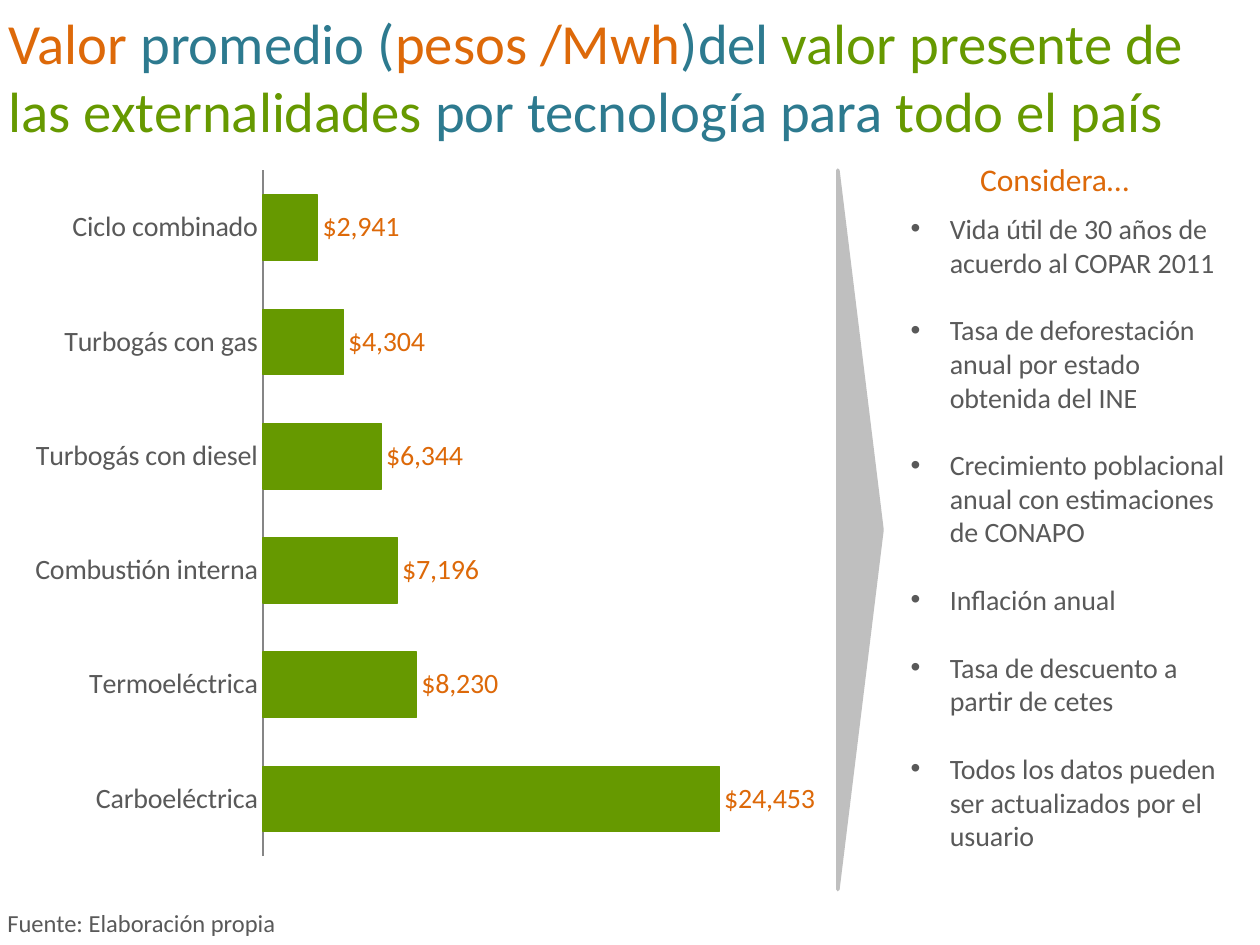
"""Build the slide on average externality values per generation technology."""
from dataclasses import dataclass

from lxml import etree
from pptx import Presentation
from pptx.chart.data import CategoryChartData
from pptx.dml.color import RGBColor
from pptx.enum.chart import XL_CHART_TYPE, XL_LABEL_POSITION, XL_TICK_LABEL_POSITION, XL_TICK_MARK
from pptx.enum.shapes import MSO_SHAPE
from pptx.enum.text import MSO_ANCHOR
from pptx.oxml.ns import qn
from pptx.util import Inches, Pt

BAR_CLUSTERED = XL_CHART_TYPE.BAR_CLUSTERED
OUTSIDE_END = XL_LABEL_POSITION.OUTSIDE_END
NO_LABELS = XL_TICK_LABEL_POSITION.NONE
NO_TICKS = XL_TICK_MARK.NONE
TRIANGLE = MSO_SHAPE.ISOSCELES_TRIANGLE
TOP, MIDDLE = MSO_ANCHOR.TOP, MSO_ANCHOR.MIDDLE


@dataclass(frozen=True)
class Theme:
    font: str = "Calibri"
    orange: RGBColor = RGBColor.from_string("DD6909")
    teal: RGBColor = RGBColor.from_string("2D7A8F")
    green: RGBColor = RGBColor.from_string("669900")
    text: RGBColor = RGBColor.from_string("595959")
    gray: RGBColor = RGBColor.from_string("BFBFBF")
    axis: RGBColor = RGBColor.from_string("868686")
    title_size: Pt = Pt(32.4)
    heading_size: Pt = Pt(18)
    body_size: Pt = Pt(16)
    source_size: Pt = Pt(14)


theme = Theme()
presentation = Presentation()
presentation.slide_width, presentation.slide_height = Inches(10), Inches(7.5)
slide = presentation.slides.add_slide(presentation.slide_layouts[6])


def area(left, top, width, height):
    """Turn percentages of the slide's size into lengths."""
    across, down = presentation.slide_width / 100, presentation.slide_height / 100
    return [round(length) for length in (left * across, top * down, width * across, height * down)]


def add_text(place, paragraphs, size, anchor=TOP):
    """Add a text box whose paragraphs are lists of (text, colour) runs."""
    frame = slide.shapes.add_textbox(*place).text_frame
    frame.word_wrap = True
    frame.vertical_anchor = anchor
    for index, runs in enumerate(paragraphs):
        paragraph = frame.add_paragraph() if index else frame.paragraphs[0]
        for text, color in runs:
            run = paragraph.add_run()
            run.text = text
            run.font.name, run.font.size = theme.font, size
            run.font.color.rgb = color
    return frame


title_runs = [
    ("Valor", theme.orange),
    (" promedio (", theme.teal),
    ("pesos /Mwh", theme.orange),
    (")del ", theme.teal),
    ("valor presente de las externalidades", theme.green),
    (" por tecnología para ", theme.teal),
    ("todo el país", theme.green),
]
add_text(area(-0.3, 0.8, 99.5, 14.53), [title_runs], theme.title_size, MIDDLE)
add_text(area(-0.4, 95.47, 92.6, 4.53), [[("Fuente: Elaboración propia", theme.text)]],
         theme.source_size)

costs = {
    "Carboeléctrica": 24453,
    "Termoeléctrica": 8230,
    "Combustión interna": 7196,
    "Turbogás con diesel": 6344,
    "Turbogás con gas": 4304,
    "Ciclo combinado": 2941,
}
chart_data = CategoryChartData(number_format='"$"#,##0')
chart_data.categories = list(costs)
chart_data.add_series("Series 1", list(costs.values()))
chart = slide.shapes.add_chart(BAR_CLUSTERED, *area(1.5, 16.53, 65.1, 75.6), chart_data).chart
chart.has_legend = chart.has_title = False
chart.font.name, chart.font.size = theme.font, theme.body_size

category_axis = chart.category_axis
category_axis.major_tick_mark = category_axis.minor_tick_mark = NO_TICKS
category_axis.tick_labels.font.size = theme.body_size
category_axis.tick_labels.font.color.rgb = theme.text
category_axis.format.line.color.rgb = theme.axis
category_axis.format.line.width = Pt(0.75)

value_axis = chart.value_axis
value_axis.minimum_scale, value_axis.maximum_scale = 0, 30000
value_axis.has_major_gridlines = False
value_axis.tick_label_position = NO_LABELS
value_axis.visible = False

plot = chart.plots[0]
plot.gap_width = 75
plot.vary_by_categories = False
bars = plot.series[0]
bars.format.fill.solid()
bars.format.fill.fore_color.rgb = theme.green
bars.format.line.color.rgb = theme.green
bars.format.line.width = Pt(0.75)
labels = bars.data_labels
labels.show_value = True
labels.position = OUTSIDE_END
labels.number_format, labels.number_format_is_linked = '"$"#,##0', False
labels.font.name, labels.font.size = theme.font, theme.body_size
labels.font.color.rgb = theme.orange

pointer = slide.shapes.add_shape(TRIANGLE, *area(39.7, 53.73, 57.1, 4.67))
pointer.rotation = 90
pointer.shadow.inherit = False
pointer.fill.solid()
pointer.fill.fore_color.rgb = theme.gray
pointer.line.color.rgb = theme.gray
pointer.line.width = Pt(2)

considerations = [
    "Vida útil de 30 años de acuerdo al COPAR 2011",
    "Tasa de deforestación anual por estado obtenida del INE",
    "Crecimiento poblacional anual con estimaciones de CONAPO",
    "Inflación anual",
    "Tasa de descuento a partir de cetes",
    "Todos los datos pueden ser actualizados por el usuario",
]
bullet_list = add_text(area(71.3, 21.73, 28, 83.87),
                       [[(item, theme.text)] for item in considerations], theme.body_size)
for paragraph in bullet_list.paragraphs:
    paragraph.space_after = Pt(19.5)
    properties = paragraph._p.get_or_add_pPr()
    properties.set("marL", str(Inches(0.31)))
    properties.set("indent", str(-Inches(0.31)))
    etree.SubElement(properties, qn("a:buFont")).set("typeface", "Arial")
    etree.SubElement(properties, qn("a:buChar")).set("char", "•")

add_text(area(76.8, 16.27, 17, 5.33), [[("Considera…", theme.orange)]], theme.heading_size)

presentation.save("out.pptx")
